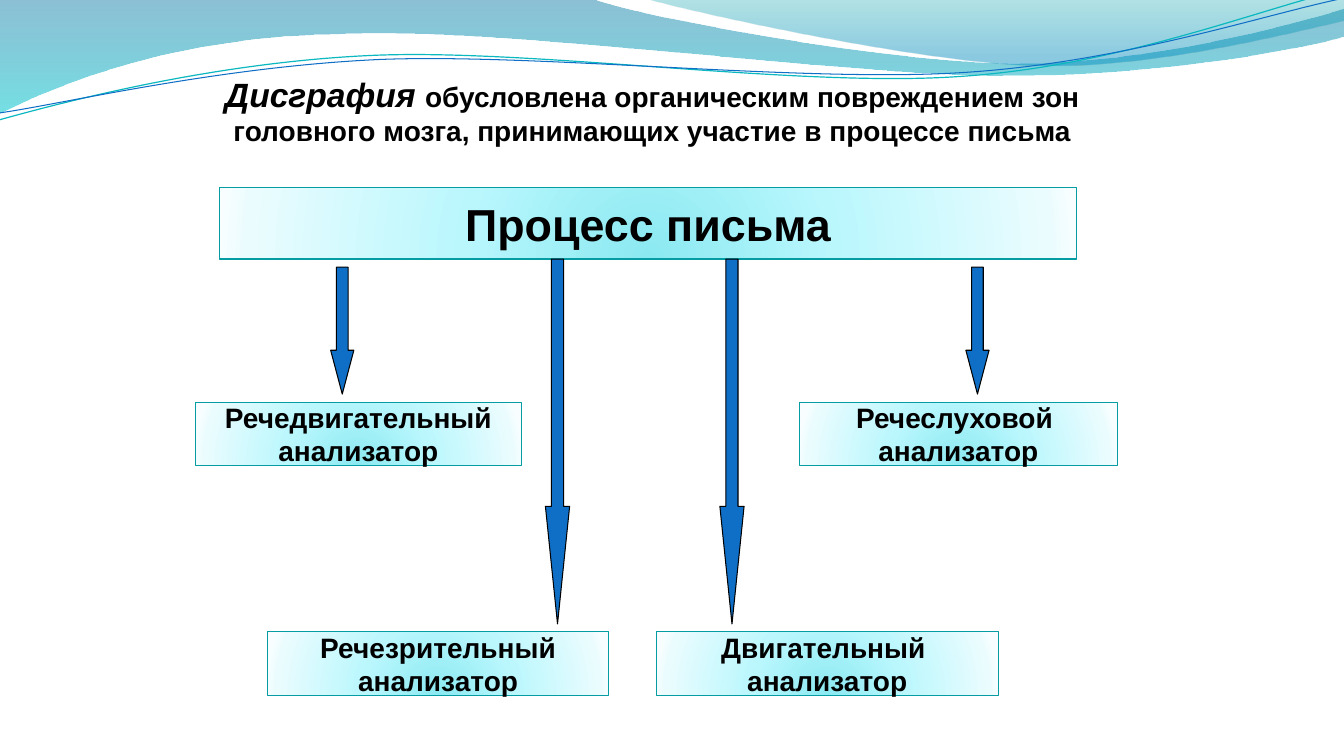
import math

from lxml import etree
from pptx import Presentation
from pptx import util as u
from pptx.dml.color import RGBColor
from pptx.enum import shapes, text
from pptx.oxml.ns import nsdecls, qn

BLACK = RGBColor(0x00, 0x00, 0x00)
BLUE = RGBColor(0x0F, 0x6F, 0xC6)
CYAN = RGBColor(0x0A, 0xB8, 0xBF)
TEAL = RGBColor(0x06, 0x9C, 0xA3)
DEEP_BLUE = RGBColor(0x00, 0x74, 0xA1)
AQUA = RGBColor(0x00, 0xC6, 0xCF)
SEA = RGBColor(0x00, 0xA1, 0xA9)
SKY = RGBColor(0x00, 0x8B, 0xBF)

# Gradient stops: position %, colour, opacity %
BOX_STOPS = [(0, RGBColor(0x8B, 0xE9, 0xF1), 100),
             (43, RGBColor(0xB9, 0xF7, 0xFD), 100),
             (93, RGBColor(0xEA, 0xFC, 0xFE), 100),
             (100, RGBColor(0xF8, 0xFE, 0xFF), 100)]
BOX_GLOW = ('<a:path path="circle"><a:fillToRect l="50000" t="130000" '
            'r="50000" b="-30000"/></a:path>')
DOWNWARD = '<a:lin ang="5400000" scaled="0"/>'

# A wave is a list of points (2 numbers) and Bezier curves (6 numbers)
WIDE_WAVE = [(0, 0), (5.87, -0.01),
             (6.34, 0.17, 8.85, 0.63, 10.11, 0.63),
             (11.38, 0.63, 12.78, 0.26, 13.33, 0.09), (13.35, 0.36),
             (13.11, 0.44, 11.6, 0.76, 9.94, 0.75),
             (8.29, 0.75, 5.09, 0.28, 3.43, 0.34),
             (1.72, 0.36, 0.61, 0.83, -0.01, 1.13)]
RIGHT_WAVE = [(6.39, -0.01), (6.79, 0.11, 9.09, 0.62, 10.25, 0.65),
              (11.41, 0.69, 12.82, 0.32, 13.33, 0.21), (13.33, 0)]
CYAN_LINE = [(-0.01, 1.19), (0.64, 1.01, 2.11, 0.62, 3.69, 0.55),
             (5.27, 0.48, 7.9, 0.87, 9.5, 0.76),
             (11.1, 0.66, 12.52, 0.08, 13.31, -0.1)]
BLUE_LINE = [(0, 1.12), (0.63, 1.03, 2.18, 0.66, 3.78, 0.59),
             (5.37, 0.53, 7.96, 0.82, 9.55, 0.72),
             (11.15, 0.62, 12.55, 0.14, 13.34, -0.02)]

BOXES = [(2.18, 1.86, 8.5, 0.71, 32, ["Процесс письма"]),
         (1.94, 3.99, 3.23, 0.63, 20, ["Речедвигательный", "анализатор"]),
         (2.65, 6.27, 3.39, 0.63, 20, ["Речезрительный", "анализатор"]),
         (7.93, 3.99, 3.15, 0.63, 20, ["Речеслуховой ", "анализатор"]),
         (6.51, 6.27, 3.39, 0.63, 20, ["Двигательный ", "анализатор"])]
# Top, width, height, head length relative to width
LONG_ARROW = (2.57, 0.24, 3.62, 4.86)
SHORT_ARROW = (2.65, 0.23, 1.26, 1.89)
ARROWS = [(7.14, *LONG_ARROW), (5.41, *LONG_ARROW),
          (3.28, *SHORT_ARROW), (9.58, *SHORT_ARROW)]


def turn(point, center, degrees):
    dx, dy = point[0] - center[0], point[1] - center[1]
    cos, sin = math.cos(math.radians(degrees)), math.sin(math.radians(degrees))
    return center[0] + dx*cos - dy*sin, center[1] + dx*sin + dy*cos


class Slide:
    """The current slide and its style."""
    font = "Arial"
    line_width = 0.75
    line_tilt = 2.7

    def __init__(self, prs):
        self.s = prs.slides.add_slide(prs.slide_layouts[5])

    def gradient(self, sp, stops, direction):
        sp.fill.background()
        gs = "".join(
            f'<a:gs pos="{pos * 1000}"><a:srgbClr val="{color}">'
            f'<a:alpha val="{opacity * 1000}"/></a:srgbClr></a:gs>'
            for pos, color, opacity in stops)
        fill = etree.fromstring(
            f'<a:gradFill {nsdecls("a")} rotWithShape="1">'
            f'<a:gsLst>{gs}</a:gsLst>{direction}</a:gradFill>')
        sp_pr = sp.element.spPr
        sp_pr.replace(sp_pr.find(qn("a:noFill")), fill)

    def outline(self, sp, color, width=line_width):
        sp.shadow.inherit = False
        sp.line.color.rgb = color
        sp.line.width = u.Pt(width)

    def freeform(self, wave, close, center=(0, 0), tilt=0):
        """Draw every point as a line, then join triples into curves."""
        points = [turn(part[i:i + 2], center, tilt)
                  for part in wave for i in range(0, len(part), 2)]
        start, *rest = [(u.Inches(x), u.Inches(y)) for x, y in points]
        builder = self.s.shapes.build_freeform(*start, scale=1.0)
        builder.add_line_segments(rest, close=close)
        sp = builder.convert_to_shape()
        lines = iter(list(sp.element.iter(qn("a:lnTo"))))
        for part in wave[1:]:
            line = next(lines)
            if len(part) == 6:
                curve = etree.Element(qn("a:cubicBezTo"))
                line.addprevious(curve)
                for piece in (line, next(lines), next(lines)):
                    curve.append(piece[0])
                    piece.getparent().remove(piece)
        return sp

    def wave_area(self, wave, stops):
        sp = self.freeform(wave, True)
        self.gradient(sp, stops, DOWNWARD)
        sp.shadow.inherit = False
        sp.line.fill.background()

    def wave_line(self, wave, center, color, width):
        sp = self.freeform(wave, False, center, self.line_tilt)
        sp.rotation = 360 - self.line_tilt
        sp.fill.background()
        self.outline(sp, color, width)

    def run(self, p, content, size, italic=False):
        r = p.add_run()
        r.text = content
        r.font.name = self.font
        r.font.size = u.Pt(size)
        r.font.bold = True
        r.font.italic = italic
        r.font.color.rgb = BLACK

    def title(self, left, top, width, height, runs):
        sp = self.s.shapes.title
        sp.left, sp.top = u.Inches(left), u.Inches(top)
        sp.width, sp.height = u.Inches(width), u.Inches(height)
        tf = sp.text_frame
        tf.word_wrap = True
        tf.auto_size = text.MSO_AUTO_SIZE.SHAPE_TO_FIT_TEXT
        tf.vertical_anchor = text.MSO_ANCHOR.TOP
        p = tf.paragraphs[0]
        p.alignment = text.PP_ALIGN.CENTER
        for content, size, italic in runs:
            self.run(p, content, size, italic)

    def box(self, left, top, width, height, size, lines):
        sp = self.s.shapes.add_shape(
            shapes.MSO_SHAPE.RECTANGLE, u.Inches(left), u.Inches(top),
            u.Inches(width), u.Inches(height))
        self.gradient(sp, BOX_STOPS, BOX_GLOW)
        self.outline(sp, TEAL)
        tf = sp.text_frame
        tf.word_wrap = False
        tf.vertical_anchor = text.MSO_ANCHOR.MIDDLE
        for i, content in enumerate(lines):
            p = tf.add_paragraph() if i else tf.paragraphs[0]
            p.alignment = text.PP_ALIGN.CENTER
            self.run(p, content, size)

    def arrow(self, left, top, width, height, head):
        sp = self.s.shapes.add_shape(
            shapes.MSO_SHAPE.DOWN_ARROW, u.Inches(left), u.Inches(top),
            u.Inches(width), u.Inches(height))
        sp.adjustments[0] = 0.5
        sp.adjustments[1] = head
        sp.fill.solid()
        sp.fill.fore_color.rgb = BLUE
        self.outline(sp, BLACK)


def main():
    prs = Presentation()
    prs.slide_width, prs.slide_height = u.Inches(13.33), u.Inches(7.5)
    slide = Slide(prs)
    slide.wave_area(WIDE_WAVE, [(0, DEEP_BLUE, 45), (100, AQUA, 55)])
    slide.wave_area(RIGHT_WAVE, [(0, SEA, 30), (80, SKY, 45)])
    slide.wave_line(CYAN_LINE, (6.65, 0.58), CYAN, 0.85)
    slide.wave_line(BLUE_LINE, (6.67, 0.59), BLUE, 0.75)
    slide.title(1.94, 0.68, 9.06, 0.84, [
        ("Дисграфия ", 24, True),
        ("обусловлена органическим повреждением зон головного мозга, "
         "принимающих участие в процессе письма", 20, False)])
    for box in BOXES:
        slide.box(*box)
    for arrow in ARROWS:
        slide.arrow(*arrow)
    prs.save("out.pptx")


if __name__ == "__main__":
    main()
